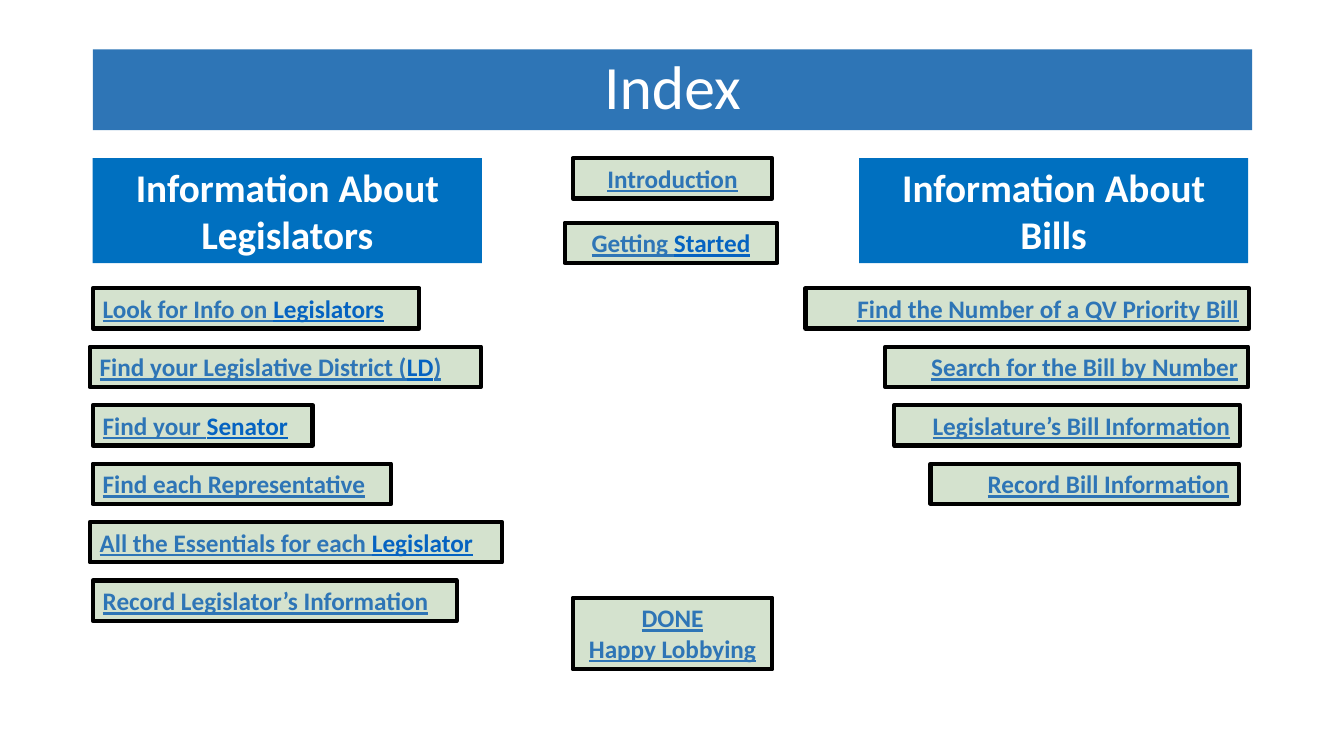
from pptx import Presentation
from pptx.dml.color import RGBColor
from pptx.enum import shapes, text
from pptx.util import Inches, Pt

COLORS = {
    "banner": "2E75B6",
    "heading": "0070C0",
    "button": "D4E2CE",
    "border": "000000",
    "link": "2E75B6",
    "accent": "0563C1",
    "white": "FFFFFF",
}
LEFT, CENTER, RIGHT = text.PP_ALIGN.LEFT, text.PP_ALIGN.CENTER, text.PP_ALIGN.RIGHT
ROW_TOP, ROW_PITCH, ROW_HEIGHT = 2.86, 0.58, 0.4

# Rows of links: left, width, lines of text; *...* marks the accent colour
LEGISLATOR_LINKS = [
    (0.92, 3.24, "Look for Info on *Legislators*"),
    (0.89, 3.88, "Find your Legislative District (*LD*)"),
    (0.92, 2.18, "Find your *Senator*"),
    (0.92, 2.96, "Find each Representative"),
    (0.89, 4.09, "All the Essentials for each *Legislator*"),
    (0.92, 3.61, "Record Legislator’s Information"),
]
BILL_LINKS = [
    (7.99, 4.4, "Find the Number of a QV Priority Bill"),
    (8.78, 3.6, "Search for the Bill by Number"),
    (8.87, 3.43, "Legislature’s Bill Information"),
    (9.23, 3.06, "Record Bill Information"),
]


def color(name):
    return RGBColor.from_string(COLORS[name])


def format_para(para, size, color_name, align, bold=True, underline=None):
    para.alignment = align
    font = para.font
    font.name, font.size = "Calibri", Pt(size)
    font.bold, font.underline = bold, underline
    font.color.rgb = color(color_name)


def add_box(page, left, top, width, height, fill):
    box = page.shapes.add_shape(
        shapes.MSO_SHAPE.RECTANGLE,
        Inches(left), Inches(top), Inches(width), Inches(height))
    box.shadow.inherit = False
    box.fill.solid()
    box.fill.fore_color.rgb = color(fill)
    box.line.fill.background()
    box.text_frame.word_wrap = True
    box.text_frame.vertical_anchor = text.MSO_ANCHOR.TOP
    return box


def add_title(page, words):
    title = page.shapes.title
    title.left, title.top = Inches(0.92), Inches(0.49)
    title.width, title.height = Inches(11.5), Inches(0.8)
    title.fill.solid()
    title.fill.fore_color.rgb = color("banner")
    frame = title.text_frame
    frame.text = words
    frame.auto_size = text.MSO_AUTO_SIZE.NONE
    frame.vertical_anchor = text.MSO_ANCHOR.MIDDLE
    format_para(frame.paragraphs[0], 44, "white", CENTER, bold=False)
    frame.paragraphs[0].line_spacing = 0.9


def add_heading(page, left, words):
    box = add_box(page, left, 1.57, 3.86, 1.04, "heading")
    box.text_frame.text = words
    format_para(box.text_frame.paragraphs[0], 28, "white", CENTER)


def add_link(page, left, top, width, words, align, height=ROW_HEIGHT):
    box = add_box(page, left, top, width, height, "button")
    box.line.color.rgb = color("border")
    box.line.width = Pt(3)
    frame = box.text_frame
    for number, line in enumerate(words.split("\n")):
        para = frame.add_paragraph() if number else frame.paragraphs[0]
        format_para(para, 18, "link", align, underline=True)
        for index, part in enumerate(line.split("*")):
            if part:
                span = para.add_run()
                span.text = part
                if index % 2:
                    span.font.color.rgb = color("accent")


def add_link_column(page, links, align):
    for row, (left, width, words) in enumerate(links):
        add_link(page, left, ROW_TOP + row * ROW_PITCH, width, words, align)


def main():
    deck = Presentation()
    deck.slide_width, deck.slide_height = Inches(13.33), Inches(7.5)
    page = deck.slides.add_slide(deck.slide_layouts.get_by_name("Title Only"))

    add_title(page, "Index")

    # Centre links
    add_link(page, 5.68, 1.57, 1.98, "Introduction", CENTER)
    add_link(page, 5.6, 2.21, 2.11, "Getting *Started*", CENTER)
    add_link(page, 5.68, 5.93, 1.98, "DONE\nHappy Lobbying", CENTER, height=0.71)

    # Legislators on the left, bills on the right
    add_heading(page, 0.92, "Information About Legislators")
    add_link_column(page, LEGISLATOR_LINKS, LEFT)
    add_heading(page, 8.52, "Information About Bills")
    add_link_column(page, BILL_LINKS, RIGHT)

    deck.save("out.pptx")


if __name__ == "__main__":
    main()
